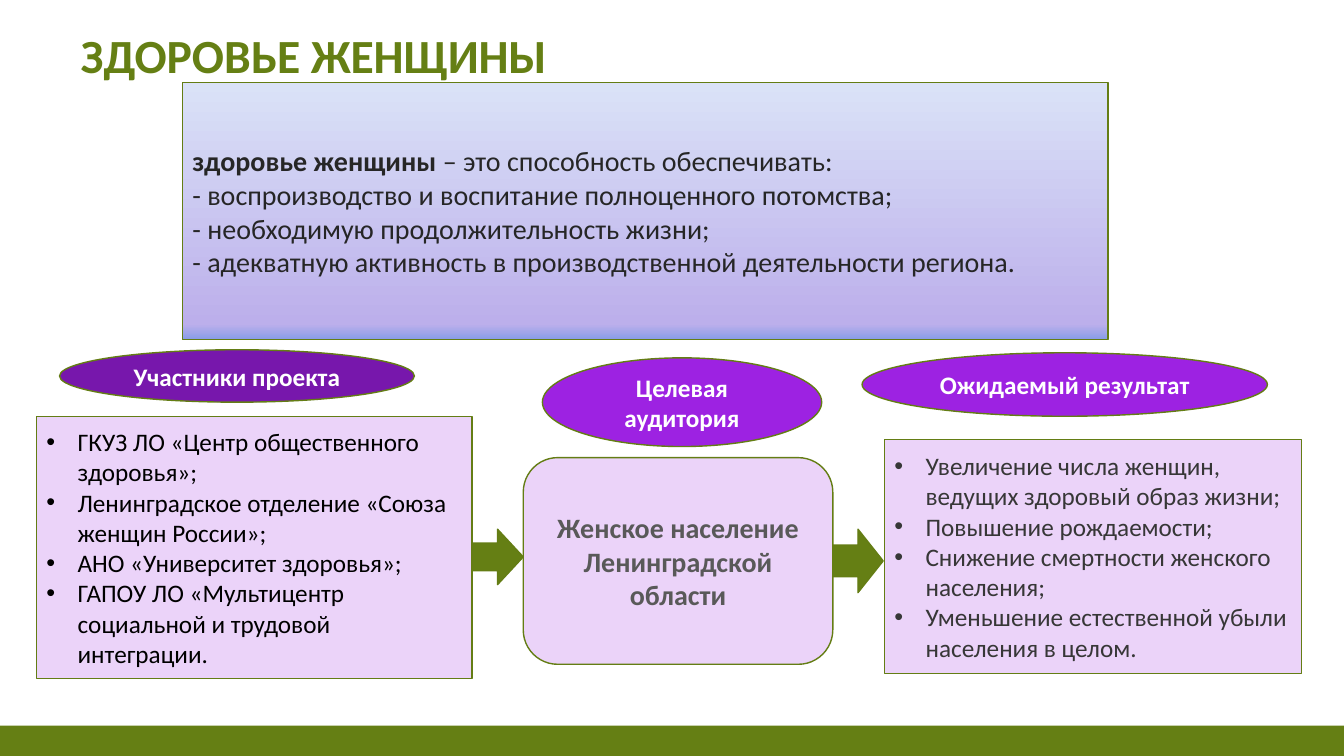
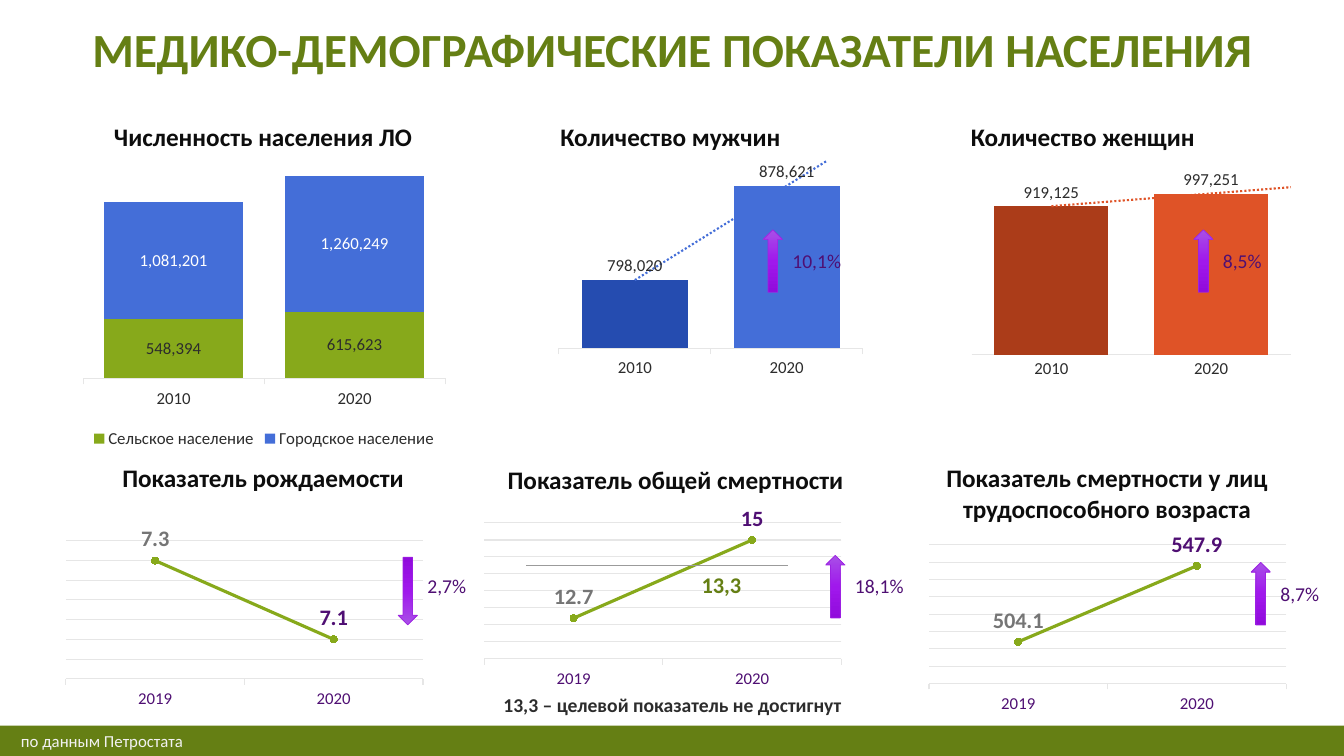
from lxml import etree
from pptx import Presentation
from pptx.chart.data import CategoryChartData
from pptx.dml.color import RGBColor
from pptx.enum.chart import (XL_CHART_TYPE, XL_LABEL_POSITION, XL_LEGEND_POSITION,
                             XL_MARKER_STYLE, XL_TICK_MARK)
from pptx.enum.shapes import MSO_CONNECTOR, MSO_SHAPE
from pptx.enum.text import MSO_ANCHOR, MSO_AUTO_SIZE, PP_ALIGN
from pptx.oxml.ns import qn
from pptx.util import Inches, Pt

RECTANGLE, ROUNDED, ELLIPSE = MSO_SHAPE.RECTANGLE, MSO_SHAPE.ROUNDED_RECTANGLE, MSO_SHAPE.OVAL
RIGHT_ARROW, UP_ARROW = MSO_SHAPE.RIGHT_ARROW, MSO_SHAPE.UP_ARROW
LEFT, CENTER, JUSTIFY = PP_ALIGN.LEFT, PP_ALIGN.CENTER, PP_ALIGN.JUSTIFY
TOP, MIDDLE, BOTTOM = MSO_ANCHOR.TOP, MSO_ANCHOR.MIDDLE, MSO_ANCHOR.BOTTOM
STACKED, CLUSTERED = XL_CHART_TYPE.COLUMN_STACKED, XL_CHART_TYPE.COLUMN_CLUSTERED
LINE = XL_CHART_TYPE.LINE_MARKERS
LABEL_CENTER, LABEL_OUTSIDE = XL_LABEL_POSITION.CENTER, XL_LABEL_POSITION.OUTSIDE_END
LABEL_ABOVE = XL_LABEL_POSITION.ABOVE
TICK_OUT, TICK_NONE = XL_TICK_MARK.OUTSIDE, XL_TICK_MARK.NONE

FONT = "Calibri"
OLIVE, OUTLINE, LILAC, WHITE = "657F14", "647D14", "EBD3F9", "FFFFFF"
DARK, PLUM, GREY, PALE = "2C2C2C", "4F0F73", "757575", "E6E6E6"
BLUE, GREEN, ORANGE = "446ED8", "87A91B", "DF5327"
VIOLET, DEEP_VIOLET = "9D22E2", "7717AC"
SKY_GRADIENT = [(0, "DAE2F7"), (94, "BCAFEB"), (100, "889CE7")]
ARROW_GRADIENT = [(0, "A850E7"), (50, "A018EC"), (100, "910BDC")]

TERM = "здоровье женщины "
DEFINITION = "– это способность обеспечивать:"
ABILITIES = [
    "- воспроизводство и воспитание полноценного потомства;",
    "- необходимую продолжительность жизни;",
    "- адекватную активность в производственной деятельности региона.",
]
HEADINGS = [
    ("Участники проекта", (0.59, 3.47, 3.52, 0.52), DEEP_VIOLET),
    ("Целевая аудитория", (5.38, 3.55, 2.77, 0.88), VIOLET),
    ("Ожидаемый результат", (8.55, 3.5, 4.02, 0.63), VIOLET),
]
LISTS = [
    ((0.36, 4.13, 4.32, 2.6), "000000", [
        "ГКУЗ ЛО «Центр общественного здоровья»;",
        "Ленинградское отделение «Союза женщин России»;",
        "АНО «Университет здоровья»;",
        "ГАПОУ ЛО «Мультицентр социальной и трудовой интеграции.",
    ]),
    ((8.77, 4.36, 4.14, 2.32), "373737", [
        "Увеличение числа женщин, ведущих здоровый образ жизни;",
        "Повышение рождаемости;",
        "Снижение смертности женского населения;",
        "Уменьшение естественной убыли населения в целом.",
    ]),
]
AUDIENCE = "Женское население Ленинградской области"
FLOW_ARROWS = [(4.68, 5.25, 0.51, 0.55), (8.26, 5.25, 0.5, 0.63)]

# plot: top and height of the plot area as shares of the chart; scale: min, max, step
COLUMN_CHARTS = [
    dict(title="Численность населения ЛО", title_box=(0.96, 1.15, 3.3, 0.4),
         box=(0.75, 1.55, 3.74, 2.94), kind=STACKED, gap=30, overlap=100,
         plot=(0.02, 0.73), scale=(0, 2000000, 500000), tick=TICK_OUT,
         series=[("Сельское население", (548394, 615623), GREEN, DARK),
                 ("Городское население", (1081201, 1260249), BLUE, WHITE)]),
    dict(title="Количество мужчин", title_box=(5, 1.15, 3.3, 0.4),
         box=(5.48, 1.55, 3.14, 2.24), kind=CLUSTERED, gap=43, overlap=-31,
         plot=(0.02, 0.83), scale=(740000, 900000, 20000), tick=TICK_OUT,
         series=[("Мужчины", (798020, 878621), BLUE, DARK)], first_color="254CB0"),
    dict(title="Количество женщин", title_box=(9.09, 1.15, 3.3, 0.4),
         box=(9.57, 1.55, 3.3, 2.24), kind=CLUSTERED, gap=40, overlap=0,
         plot=(0.02, 0.86), scale=(0, 1200000, 200000), tick=TICK_NONE,
         series=[("Женщины", (919125, 997251), ORANGE, DARK)], first_color="AB3C19"),
]
LINE_CHARTS = [
    dict(title="Показатель рождаемости", title_box=(0.96, 4.54, 3.3, 0.4),
         origin=(0.58, 5.22), values=(7.3, 7.1), scale=(7, 7.35, 0.05)),
    dict(title="Показатель общей смертности", title_box=(4.79, 4.56, 3.82, 0.4),
         origin=(4.73, 5.02), values=(12.7, 15), scale=(11.5, 15.5, 0.5)),
    dict(title="Показатель смертности у лиц трудоспособного возраста",
         title_box=(9.07, 4.54, 3.82, 0.71),
         origin=(9.14, 5.27), values=(504.1, 547.9), scale=(480, 560, 10)),
]
# text, arrow left and top, arrow height, text top, falling
CHANGES = [
    ("10,1%", 7.57, 2.28, 0.62, 2.42, False),
    ("8,5%", 11.84, 2.28, 0.62, 2.42, False),
    ("2,7%", 3.95, 5.53, 0.67, 5.64, True),
    ("18,1%", 8.19, 5.51, 0.62, 5.64, False),
    ("8,7%", 12.41, 5.58, 0.62, 5.72, False),
]


def rgb(color):
    return RGBColor.from_string(color)


def place(box):
    return [Inches(length) for length in box]


def style_font(font, size, color, bold=False):
    font.name, font.size, font.bold = FONT, Pt(size), bold
    font.color.rgb = rgb(color)


def style_line(line, color, width):
    line.color.rgb = rgb(color)
    line.width = Pt(width)


def write(shape, lines, size, color, bold=False, align=CENTER, anchor=MIDDLE):
    frame = shape.text_frame
    frame.text = "\n".join(lines)
    frame.word_wrap = True
    frame.auto_size = MSO_AUTO_SIZE.NONE
    frame.vertical_anchor = anchor
    for paragraph in frame.paragraphs:
        paragraph.alignment = align
        for run in paragraph.runs:
            style_font(run.font, size, color, bold)
    return frame


def fill_solid(shape, color):
    shape.fill.solid()
    shape.fill.fore_color.rgb = rgb(color)


def fill_gradient(shape, stops):
    """Fill from top to bottom through (percent, colour) stops."""
    shape.fill.gradient()
    shape.fill.gradient_angle = 270
    stop_list = shape.element.find(".//" + qn("a:gsLst"))
    for old_stop in list(stop_list):
        stop_list.remove(old_stop)
    for percent, color in stops:
        stop = etree.SubElement(stop_list, qn("a:gs"), pos=str(percent * 1000))
        etree.SubElement(stop, qn("a:srgbClr"), val=color)


def add_shape(slide, kind, box, fill, line=OUTLINE, width=1):
    shape = slide.shapes.add_shape(kind, *place(box))
    shape.shadow.inherit = False
    if isinstance(fill, list):
        fill_gradient(shape, fill)
    else:
        fill_solid(shape, fill)
    style_line(shape.line, line, width)
    return shape


def add_text(slide, box, text, size, color, bold=False, align=LEFT):
    text_box = slide.shapes.add_textbox(*place(box))
    return write(text_box, [text], size, color, bold, align, TOP)


def set_title(slide, box, text, align):
    title = slide.shapes.title
    title.left, title.top, title.width, title.height = place(box)
    frame = write(title, [text], 34, OLIVE, True, align, BOTTOM)
    frame.paragraphs[0].line_spacing = 0.9


def fill_list(placeholder, box, color, items):
    placeholder.left, placeholder.top, placeholder.width, placeholder.height = place(box)
    fill_solid(placeholder, LILAC)
    style_line(placeholder.line, OUTLINE, 1)
    frame = write(placeholder, items, 18, color, align=LEFT)
    for paragraph in frame.paragraphs:
        paragraph.space_before = Pt(0)
        properties = paragraph._p.get_or_add_pPr()
        properties.set("marL", str(Inches(0.31)))
        properties.set("indent", str(-Inches(0.31)))
        etree.SubElement(properties, qn("a:buChar"), char="•")


def add_band_to_master(presentation, slide):
    band = add_shape(slide, RECTANGLE, (0, 7.2, 13.33, 0.3), OLIVE)
    band.line.fill.background()
    presentation.slide_master.shapes.element.insert(2, band.element)


def add_chart(slide, kind, box, categories, series, scale, plot_rows, color, tick=TICK_OUT):
    data = CategoryChartData()
    data.categories = categories
    for name, values in series:
        data.add_series(name, values)
    chart = slide.shapes.add_chart(kind, *place(box), data).chart
    chart.has_title = chart.has_legend = False
    style_font(chart.font, 10, color)

    axis = chart.category_axis
    axis.major_tick_mark = tick
    style_font(axis.tick_labels.font, 12, color)
    style_line(axis.format.line, PALE, 0.75)
    value_axis = chart.value_axis
    value_axis.visible = False
    value_axis.has_major_gridlines = kind == LINE
    value_axis.minimum_scale, value_axis.maximum_scale, value_axis.major_unit = scale
    chart.plots[0].vary_by_categories = False

    area = chart.element.find(".//" + qn("c:plotArea"))
    for old_layout in area.findall(qn("c:layout")):
        area.remove(old_layout)
    layout = etree.Element(qn("c:layout"))
    area.insert(0, layout)
    manual = etree.SubElement(layout, qn("c:manualLayout"))
    top, height = plot_rows
    for tag, value in [("layoutTarget", "inner"), ("xMode", "edge"), ("yMode", "edge"),
                       ("x", 0.02), ("y", top), ("w", 0.96), ("h", height)]:
        etree.SubElement(manual, qn("c:" + tag), val=str(value))
    return chart


def label_series(series, position, size, color, number_format, bold=False):
    labels = series.data_labels
    labels.show_value = True
    labels.position = position
    labels.number_format = number_format
    labels.number_format_is_linked = False
    style_font(labels.font, size, color, bold)


def add_trend(series, color):
    """Add a dotted linear trend that runs half a category past the last column."""
    trend = etree.Element(qn("c:trendline"))
    properties = etree.SubElement(trend, qn("c:spPr"))
    line = etree.SubElement(properties, qn("a:ln"), w=str(Pt(1.5)))
    fill = etree.SubElement(line, qn("a:solidFill"))
    etree.SubElement(fill, qn("a:srgbClr"), val=color)
    etree.SubElement(line, qn("a:prstDash"), val="sysDot")
    for tag, value in [("trendlineType", "linear"), ("forward", "0.5"),
                       ("dispRSqr", "0"), ("dispEq", "0")]:
        etree.SubElement(trend, qn("c:" + tag), val=value)
    series._element.find(qn("c:cat")).addprevious(trend)


def add_column_chart(slide, spec):
    chart = add_chart(slide, spec["kind"], spec["box"], ["2010", "2020"],
                      [entry[:2] for entry in spec["series"]],
                      spec["scale"], spec["plot"], DARK, spec["tick"])
    plot = chart.plots[0]
    plot.gap_width, plot.overlap = spec["gap"], spec["overlap"]
    stacked = spec["kind"] == STACKED
    for series, (_, _, color, label_color) in zip(plot.series, spec["series"]):
        fill_solid(series.format, color)
        label_series(series, LABEL_CENTER if stacked else LABEL_OUTSIDE, 12, label_color, "#,##0")
        if not stacked:
            fill_solid(series.points[0].format, spec["first_color"])
            add_trend(series, color)
    if stacked:
        chart.has_legend = True
        chart.legend.position = XL_LEGEND_POSITION.BOTTOM
        chart.legend.include_in_layout = False
        style_font(chart.legend.font, 12, DARK)


def add_line_chart(slide, spec):
    chart = add_chart(slide, LINE, (*spec["origin"], 3.69, 1.82), ["2019", "2020"],
                      [(spec["title"], spec["values"])], spec["scale"], (0.07, 0.76), PLUM)
    style_line(chart.value_axis.major_gridlines.format.line, PALE, 0.75)
    series = chart.plots[0].series[0]
    series.smooth = False
    style_line(series.format.line, GREEN, 2.25)
    series.marker.style, series.marker.size = XL_MARKER_STYLE.CIRCLE, 5
    fill_solid(series.marker.format, GREEN)
    style_line(series.marker.format.line, GREEN, 0.75)
    label_series(series, LABEL_ABOVE, 16, PLUM, "General", True)
    first_label = series.points[0].data_label
    style_font(first_label.font, 16, GREY, True)
    first_label.position = LABEL_ABOVE


def build_health_slide(slide):
    set_title(slide, (0.7, 0.17, 10, 0.71), "ЗДОРОВЬЕ ЖЕНЩИНЫ", LEFT)
    panel = add_shape(slide, RECTANGLE, (1.81, 0.82, 9.18, 2.55), SKY_GRADIENT)
    frame = write(panel, [TERM, *ABILITIES], 20, "262626", align=JUSTIFY)
    opening = frame.paragraphs[0]
    opening.runs[0].font.bold = True
    definition = opening.add_run()
    definition.text = DEFINITION
    style_font(definition.font, 20, "262626")

    audience = add_shape(slide, ROUNDED, (5.19, 4.54, 3.07, 2.05), LILAC)
    write(audience, [AUDIENCE], 20, "595959", True)
    for placeholder, (box, color, items) in zip(list(slide.placeholders)[1:], LISTS):
        fill_list(placeholder, box, color, items)
    for box in FLOW_ARROWS:
        add_shape(slide, RIGHT_ARROW, box, OLIVE)
    for text, box, color in HEADINGS:
        write(add_shape(slide, ELLIPSE, box, color), [text], 18, WHITE, True)


def build_indicator_slide(slide):
    set_title(slide, (0.38, -0.43, 12.58, 1.25), "МЕДИКО-ДЕМОГРАФИЧЕСКИЕ ПОКАЗАТЕЛИ НАСЕЛЕНИЯ", CENTER)
    add_text(slide, (0.11, 7.2, 2.01, 0.3), "по данным Петростата", 12, "F2F2F2")
    for specs, draw in [(COLUMN_CHARTS, add_column_chart), (LINE_CHARTS, add_line_chart)]:
        for spec in specs:
            draw(slide, spec)
            add_text(slide, spec["title_box"], spec["title"], 18, "0D0D0D", True, CENTER)
    for text, left, top, height, text_top, falling in CHANGES:
        arrow = add_shape(slide, UP_ARROW, (left, top, 0.19, height), ARROW_GRADIENT, VIOLET, 0.5)
        if falling:
            arrow.element.find(".//" + qn("a:xfrm")).set("flipV", "1")
        add_text(slide, (left + 0.19, text_top, 0.78, 0.34), text, 14, PLUM)

    target = slide.shapes.add_connector(MSO_CONNECTOR.STRAIGHT, *place((5.22, 5.61, 7.82, 5.61)))
    style_line(target.line, "9B9B9B", 0.5)
    etree.SubElement(target.element.spPr, qn("a:effectLst"))
    add_text(slide, (6.86, 5.62, 0.6, 0.37), "13,3", 16, OLIVE, True).word_wrap = False
    add_text(slide, (4.86, 6.83, 3.62, 0.34), "13,3 – целевой показатель не достигнут", 14, DARK, True, CENTER)


def main():
    presentation = Presentation()
    presentation.slide_width, presentation.slide_height = Inches(13.33), Inches(7.5)
    two_lists, title_only = presentation.slide_layouts[3], presentation.slide_layouts[5]
    health_slide = presentation.slides.add_slide(two_lists)
    add_band_to_master(presentation, health_slide)
    build_health_slide(health_slide)
    build_indicator_slide(presentation.slides.add_slide(title_only))
    presentation.save("out.pptx")


if __name__ == "__main__":
    main()
